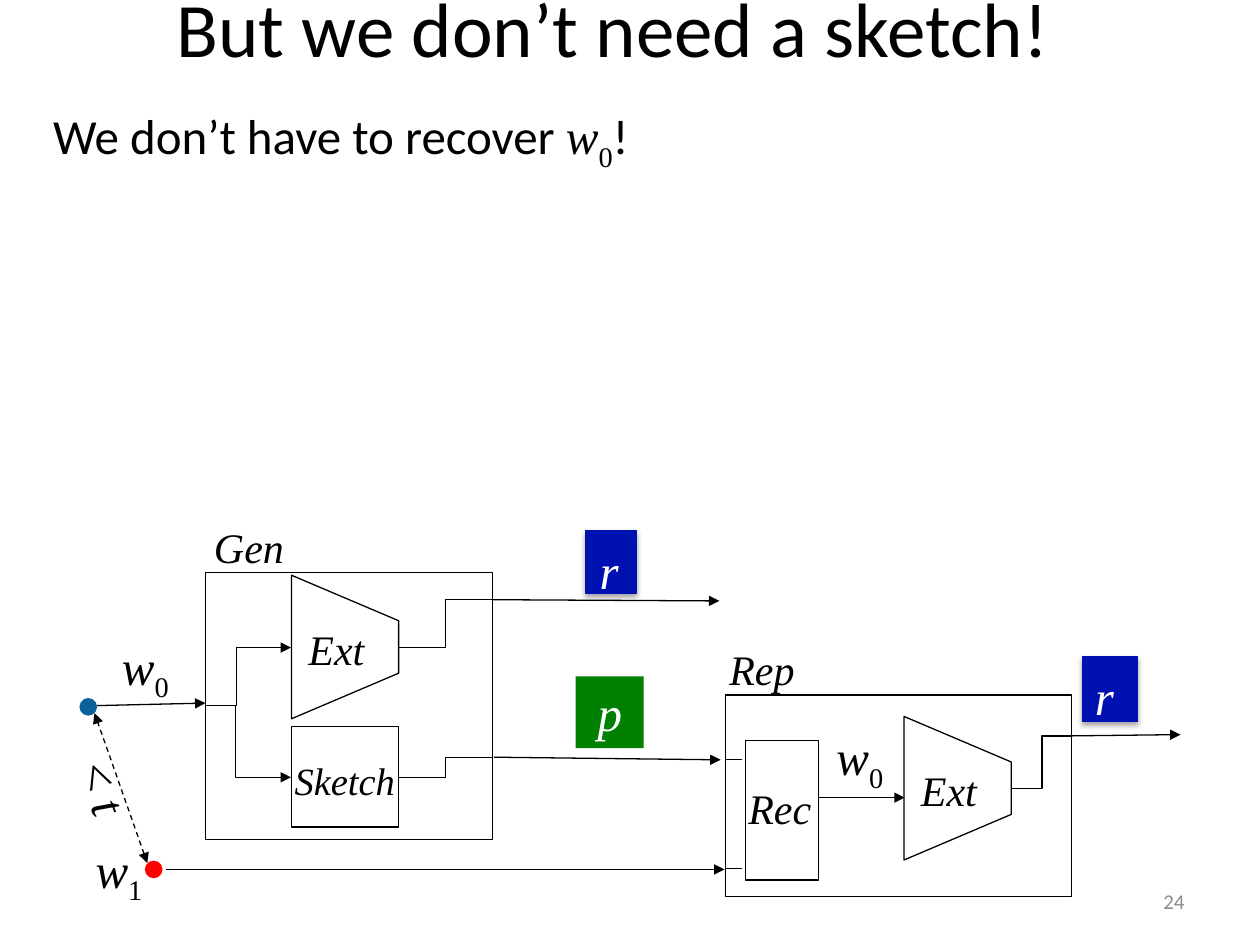
import pptx
import pptx.util
import pptx.dml.color
import pptx.enum.dml
import pptx.enum.shapes
import pptx.enum.text
import pptx.oxml
import pptx.oxml.ns
import pptx.oxml.xmlchemy

Pt = pptx.util.Pt
SHAPE = pptx.enum.shapes.MSO_SHAPE
CONNECTOR = pptx.enum.shapes.MSO_CONNECTOR
ALIGN = pptx.enum.text.PP_ALIGN
ANCHOR = pptx.enum.text.MSO_ANCHOR
COLORS = {"ink": "000000", "paper": "FFFFFF", "key": "0011B2", "helper": "008000",
          "first": "0B609A", "second": "FF0000", "number": "8C8C8C"}
SERIF, SANS = "Times New Roman", "Calibri"
SHADOW = ('<a:effectLst %s><a:outerShdw blurRad="39370" dist="22860" dir="5400000" rotWithShape="0">'
          '<a:srgbClr val="000000"><a:alpha val="35000"/></a:srgbClr></a:outerShdw></a:effectLst>'
          % pptx.oxml.ns.nsdecls("a"))


def color(name):
    return pptx.dml.color.RGBColor.from_string(COLORS[name])


def write(frame, runs, size, ink="ink", font=SERIF, align=ALIGN.LEFT):
    paragraph = frame.paragraphs[0]
    paragraph.alignment = align
    paragraph.font.size = Pt(size)
    paragraph.font.color.rgb = color(ink)
    paragraph.font.name = font
    styles = {style for _, style in runs}
    paragraph.font.italic = styles == {"italic"}
    for words, style in runs:
        run = paragraph.add_run()
        run.text = words
        if len(styles) > 1 and style == "italic":
            run.font.italic = True
        if style and font != SERIF:
            run.font.name = SERIF
        if style == "sub":
            run._r.get_or_add_rPr().set("baseline", "-25000")


def label(slide, left, top, width, height, runs, size=28, ink="ink", turn=0):
    box = slide.shapes.add_textbox(Pt(left), Pt(top), Pt(width), Pt(height))
    box.rotation = turn
    box.text_frame.word_wrap = False
    box.text_frame.auto_size = pptx.enum.text.MSO_AUTO_SIZE.SHAPE_TO_FIT_TEXT
    write(box.text_frame, runs, size, ink)


def heading(slide, left, top, width, height, runs, size, align, ink="ink", anchor=ANCHOR.TOP):
    box = slide.shapes.add_textbox(Pt(left), Pt(top), Pt(width), Pt(height))
    box.text_frame.word_wrap = True
    box.text_frame.vertical_anchor = anchor
    write(box.text_frame, runs, size, ink, SANS, align)


def reading(slide, left, top, index):
    label(slide, left, top, 46, 41, [("w", "italic"), (index, "sub")])


def block(slide, kind, left, top, width, height, fill=None, outline=None):
    shape = slide.shapes.add_shape(kind, Pt(left), Pt(top), Pt(width), Pt(height))
    shape.shadow.inherit = False
    if fill:
        shape.fill.solid()
        shape.fill.fore_color.rgb = color(fill)
    else:
        shape.fill.background()
    if outline:
        shape.line.color.rgb = color(outline)
        shape.line.width = Pt(0.75)
    else:
        shape.line.fill.background()
    return shape


def frame(slide, left, top, width, height):
    block(slide, SHAPE.RECTANGLE, left, top, width, height, outline="ink")


def extractor(slide, left, top):
    funnel = block(slide, SHAPE.TRAPEZOID, left, top, 82, 61.2, outline="ink")
    funnel.adjustments[0] = 0.425
    funnel.rotation = 90
    label(slide, left + 13, top + 13.7, 54.7, 36, [("Ext", "italic")], 24)


def key(slide, left, top, width, height):
    card = block(slide, SHAPE.RECTANGLE, left, top, width, height, "key", "key")
    properties = card._element.spPr
    properties.remove(properties.find(pptx.oxml.ns.qn("a:effectLst")))
    properties.append(pptx.oxml.parse_xml(SHADOW))


def wire(slide, start, end, arrows=("tailEnd",), bend=None, dashed=False):
    kind = CONNECTOR.STRAIGHT if bend is None else CONNECTOR.ELBOW
    line = slide.shapes.add_connector(kind, *(Pt(value) for value in (*start, *end)))
    line.line.color.rgb = color("ink")
    line.line.width = Pt(0.75)
    if dashed:
        line.line.dash_style = pptx.enum.dml.MSO_LINE.DASH
    properties = line._element.spPr
    for arrow in arrows:
        tip = pptx.oxml.xmlchemy.OxmlElement("a:" + arrow)
        tip.set("type", "triangle")
        properties.find(pptx.oxml.ns.qn("a:ln")).append(tip)
    if bend is not None:
        guide = pptx.oxml.xmlchemy.OxmlElement("a:gd")
        guide.set("name", "adj1")
        guide.set("fmla", f"val {round(bend * 100000)}")
        properties.find(".//" + pptx.oxml.ns.qn("a:avLst")).append(guide)
    properties.append(pptx.oxml.xmlchemy.OxmlElement("a:effectLst"))


def draw_generator(slide):
    key(slide, 334.8, 303, 28.8, 36)
    frame(slide, 117.4, 327, 164.2, 152.6)
    label(slide, 115.2, 294.5, 62.6, 36, [("Gen", "italic")], 24)
    wire(slide, (55.4, 403.2), (117.4, 401.8))
    wire(slide, (281.5, 342.7), (411.1, 343.4))
    reading(slide, 62.6, 360, "0")
    label(slide, 335.5, 305.3, 35.3, 41, [("r", "italic")], ink="paper")
    helper = block(slide, SHAPE.RECTANGLE, 329, 386.6, 38.9, 41, "helper")
    helper.text_frame.word_wrap = False
    helper.text_frame.vertical_anchor = ANCHOR.TOP
    write(helper.text_frame, [("p", "italic")], 28, "paper", align=ALIGN.CENTER)
    extractor(slide, 156.2, 339.1)
    frame(slide, 166.7, 415.1, 61.2, 57.6)
    label(slide, 161.3, 429.1, 79.9, 33.8, [("Sketch", "italic")], 22)
    wire(slide, (117.4, 403.2), (166.3, 370.1), bend=0.36)
    wire(slide, (117.4, 403.2), (166.3, 444.2), bend=0.35)
    wire(slide, (281.5, 342.7), (227.5, 370.1), (), 0.5)
    wire(slide, (281.5, 432.7), (227.5, 444.2), (), 0.5)
    wire(slide, (282.2, 432.7), (411.8, 434.2))


def draw_reproducer(slide):
    frame(slide, 414.4, 397.1, 198, 115.2)
    label(slide, 409.7, 364.3, 60.5, 36, [("Rep", "italic")], 24)
    wire(slide, (612.7, 420.5), (674.6, 419.8))
    extractor(slide, 506.2, 419.8)
    wire(slide, (612.7, 420.5), (578.2, 450.7), (), 0.5)
    key(slide, 618.5, 375.1, 31.7, 37.4)
    label(slide, 618.5, 377.3, 35.3, 41, [("r", "italic")], ink="paper")
    frame(slide, 425.9, 423, 41.8, 79.9)
    label(slide, 420.5, 443.5, 59, 46.8, [("Rec", "italic")], 24)
    for height in (434.2, 496.1):
        wire(slide, (414, height), (424.1, height), ())
    wire(slide, (467.3, 455.8), (517, 455.8))
    reading(slide, 470.9, 411.8, "0")


def draw_readings(slide):
    wire(slide, (95, 496.8), (414, 496.8))
    block(slide, SHAPE.OVAL, 82.8, 491.8, 10.1, 10.1, "second")
    reading(slide, 47.5, 475.9, "1")
    block(slide, SHAPE.OVAL, 45.4, 398.9, 10.1, 10.1, "first")
    wire(slide, (84.2, 493.2), (54, 407.5), ("headEnd", "tailEnd"), dashed=True)
    label(slide, 36.7, 430.6, 46.8, 41, [("< ", ""), ("t", "italic")], turn=69.7)


def main():
    deck = pptx.Presentation()
    deck.slide_width, deck.slide_height = Pt(720), Pt(540)
    slide = deck.slides.add_slide(deck.slide_layouts[6])
    draw_generator(slide)
    draw_reproducer(slide)
    draw_readings(slide)
    heading(slide, -18, 56.9, 425.5, 54,
            [("We don’t have to recover ", ""), ("w", "italic"), ("0", "sub"), ("!", "")],
            28, ALIGN.CENTER)
    heading(slide, -38.9, -18.7, 778.3, 67.7, [("But we don’t need a sketch!", "")],
            44, ALIGN.CENTER, anchor=ANCHOR.MIDDLE)
    heading(slide, 516.2, 500.4, 167.8, 28.8, [("24", "")], 12, ALIGN.RIGHT, "number", ANCHOR.MIDDLE)
    deck.save("out.pptx")


if __name__ == "__main__":
    main()
